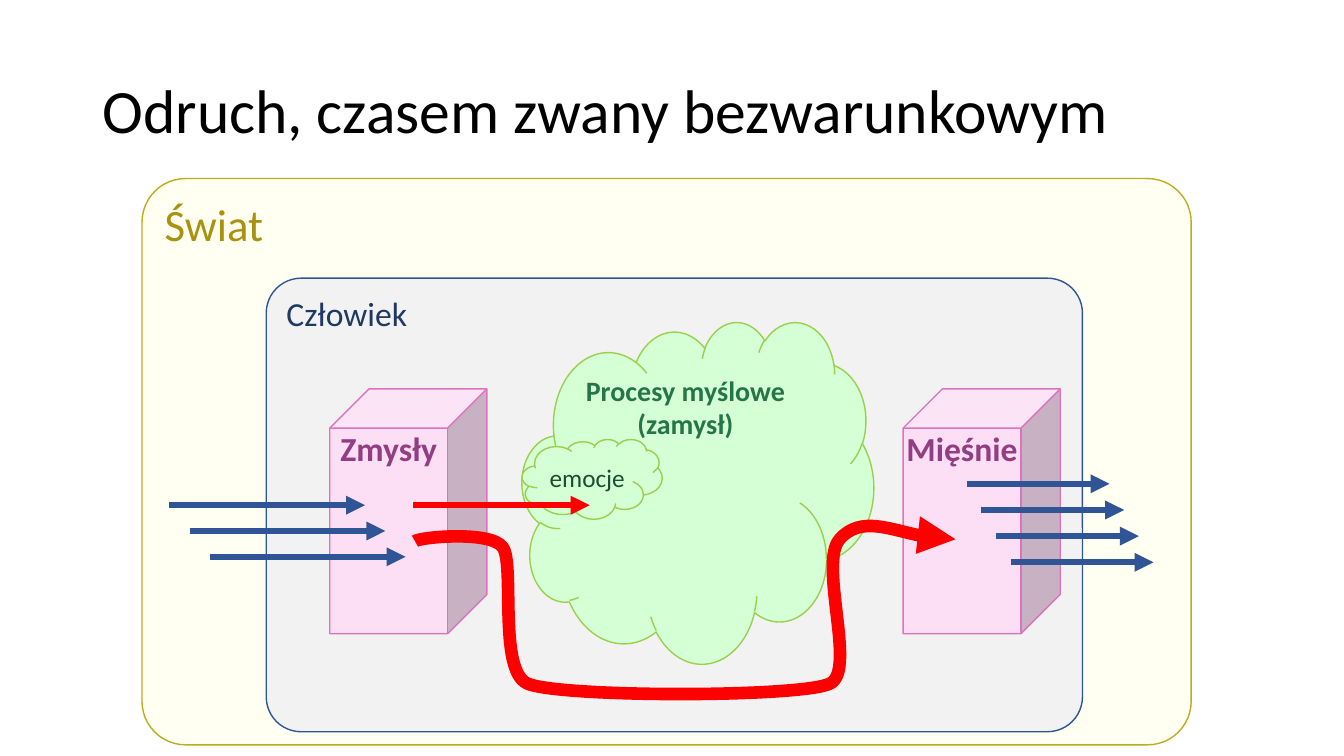
"""Builds the slide on the unconditioned reflex: world, human, senses, thought and muscles."""
from lxml import etree
from pptx import Presentation
from pptx.dml.color import RGBColor
from pptx.enum import shapes, text
from pptx.oxml import ns
from pptx.util import Cm, Pt

COLORS = {
    "black": "000000", "red": "FF0000", "blue": "2F5597", "navy": "203864",
    "cream": "FFFFF2", "gold": "BBAD1D", "dark gold": "A9920F", "grey": "F2F2F2",
    "pink": "FCDEF5", "rose": "DD73BC", "purple": "923E83",
    "mint": "D5FFD4", "lime": "99D14D", "green": "257549", "dark green": "194F31",
}
FONT = "Calibri"
TITLE = "Odruch, czasem zwany bezwarunkowym"
TITLE_BOX = (2.33, 1.02, 29.21, 3.68)

KINDS = {
    "frame": shapes.MSO_SHAPE.ROUNDED_RECTANGLE,
    "block": shapes.MSO_SHAPE.CUBE,
    "cloud": shapes.MSO_SHAPE.CLOUD,
}
# kind, box, lines, size, bold, anchor, fill, outline, ink
PARTS = [
    ("frame", (3.58, 4.5, 26.44, 14.27), ["Świat"], 32, False, "TOP", "cream", "gold", "dark gold"),
    ("frame", (6.71, 7.01, 20.57, 11.43), ["Człowiek"], 24, False, "TOP", "grey", "blue", "navy"),
    ("block", (22.76, 9.8, 3.96, 6.17), ["Mięśnie"], 24, True, "TOP", "pink", "rose", "purple"),
    ("block", (8.31, 9.8, 3.96, 6.17), ["Zmysły"], 24, True, "TOP", "pink", "rose", "purple"),
    ("cloud", (13.16, 8.1, 8.86, 8.61), ["Procesy myślowe", "(zamysł)"], 20, True, "TOP",
     "mint", "lime", "green"),
    ("cloud", (13.16, 11.07, 3.53, 2.01), ["emocje"], 18, False, "MIDDLE",
     "mint", "lime", "dark green"),
]
REFLEX_START = (10.46, 13.64)
REFLEX_CURVES = [
    [(10.54, 13.54), (12.37, 13.36), (12.67, 13.79)],
    [(12.98, 14.2), (12.55, 16.87), (13.28, 17.22)],
    [(14.05, 17.58), (20.27, 17.58), (20.93, 17.22)],
    [(21.59, 16.87), (20.62, 14.2), (21.16, 13.59)],
    [(21.69, 12.98), (23.57, 13.69), (24.08, 13.59)],
]
ARROW_GROUPS = [
    {"start": (24.36, 12.19), "length": 3.6, "step": (0.37, 0.66), "count": 4, "color": "blue"},
    {"start": (4.27, 12.73), "length": 4.93, "step": (0.51, 0.65), "count": 3, "color": "blue"},
    {"start": (10.41, 12.73), "length": 4.45, "step": (0, 0), "count": 1, "color": "red"},
]


def rgb(name):
    return RGBColor.from_string(COLORS[name])


def style_line(line, color, width):
    line.color.rgb = rgb(color)
    line.width = Pt(width)


def add_arrowhead(arrow):
    outline = arrow.element.spPr.find(ns.qn("a:ln"))
    etree.SubElement(outline, ns.qn("a:tailEnd"), type="triangle")


def style_paragraph(paragraph, size, bold, ink, align):
    paragraph.alignment = align
    font = paragraph.font
    font.name, font.size, font.bold = FONT, Pt(size), bold
    font.color.rgb = rgb(ink)


def add_title(slide):
    title = slide.shapes.title
    title.left, title.top, title.width, title.height = map(Cm, TITLE_BOX)
    frame = title.text_frame
    frame.text = TITLE
    frame.vertical_anchor = text.MSO_ANCHOR.MIDDLE
    style_paragraph(frame.paragraphs[0], 44, False, "black", text.PP_ALIGN.LEFT)
    frame.paragraphs[0].line_spacing = 0.9


def add_part(slide, kind, box, lines, size, bold, anchor, fill, outline, ink):
    part = slide.shapes.add_shape(KINDS[kind], *map(Cm, box))
    part.shadow.inherit = False
    part.fill.solid()
    part.fill.fore_color.rgb = rgb(fill)
    style_line(part.line, outline, 1)
    frame = part.text_frame
    frame.word_wrap = True
    frame.vertical_anchor = text.MSO_ANCHOR[anchor]
    align = text.PP_ALIGN.CENTER
    if kind == "frame":
        part.adjustments[0] = 0.077
        align = text.PP_ALIGN.LEFT
    else:
        frame.margin_left = frame.margin_top = frame.margin_right = frame.margin_bottom = 0
    frame.text = "\n".join(lines)
    for paragraph in frame.paragraphs:
        style_paragraph(paragraph, size, bold, ink, align)


def add_reflex(slide):
    points = [(Cm(x), Cm(y)) for curve in REFLEX_CURVES for x, y in curve]
    builder = slide.shapes.build_freeform(*map(Cm, REFLEX_START))
    builder.add_line_segments(points, close=False)
    reflex = builder.convert_to_shape()
    segments = list(reflex.element.iter(ns.qn("a:lnTo")))
    for first in range(0, len(segments), 3):
        curve = segments[first]
        curve.tag = ns.qn("a:cubicBezTo")
        for segment in segments[first + 1:first + 3]:
            curve.append(segment[0])
            segment.getparent().remove(segment)
    reflex.shadow.inherit = False
    reflex.fill.background()
    style_line(reflex.line, "red", 9)
    add_arrowhead(reflex)


def add_arrows(slide, start, length, step, count, color):
    for index in range(count):
        x, y = (origin + index * shift for origin, shift in zip(start, step))
        arrow = slide.shapes.add_connector(
            shapes.MSO_CONNECTOR.STRAIGHT, Cm(x), Cm(y), Cm(x + length), Cm(y))
        style_line(arrow.line, color, 4.5)
        add_arrowhead(arrow)
        etree.SubElement(arrow.element.spPr, ns.qn("a:effectLst"))


def main():
    deck = Presentation()
    deck.slide_width, deck.slide_height = Cm(33.87), Cm(19.05)
    slide = deck.slides.add_slide(deck.slide_layouts[5])
    add_title(slide)
    for part in PARTS:
        add_part(slide, *part)
    add_reflex(slide)
    for group in ARROW_GROUPS:
        add_arrows(slide, **group)
    deck.save("out.pptx")


if __name__ == "__main__":
    main()
